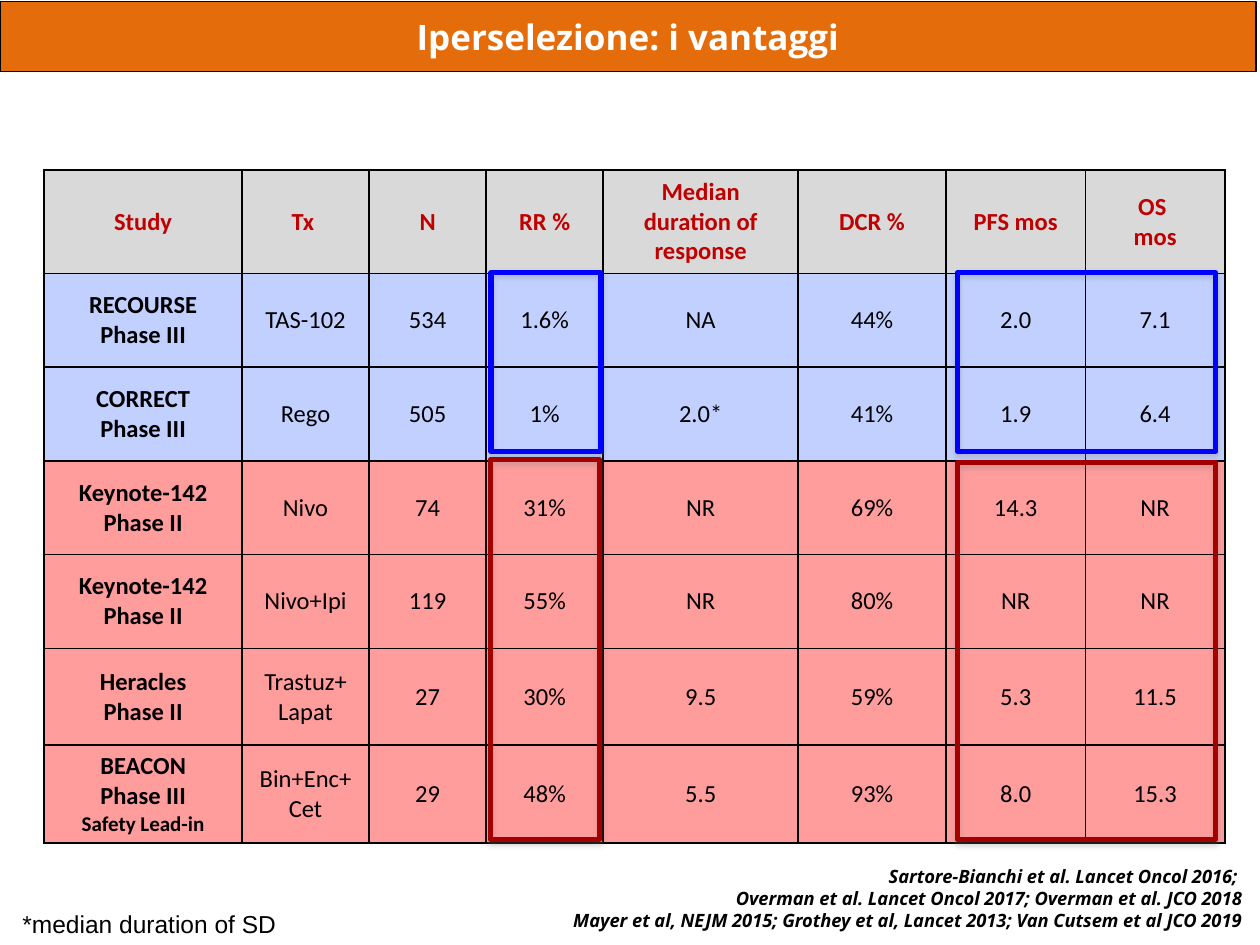
from dataclasses import dataclass
from typing import Any

import pptx
import pptx.dml.color
import pptx.enum.shapes
import pptx.enum.text
import pptx.oxml
import pptx.oxml.ns
import pptx.util

Cm = pptx.util.Cm
Pt = pptx.util.Pt
Rgb = pptx.dml.color.RGBColor
Align = pptx.enum.text.PP_ALIGN
Anchor = pptx.enum.text.MSO_ANCHOR
RECT = pptx.enum.shapes.MSO_SHAPE.RECTANGLE

BLACK = Rgb(0x00, 0x00, 0x00)
WHITE = Rgb(0xFF, 0xFF, 0xFF)
GREY = Rgb(0xD9, 0xD9, 0xD9)
ORANGE = Rgb(0xE4, 0x6C, 0x0A)
CRIMSON = Rgb(0xC0, 0x00, 0x00)
RED = Rgb(0xFF, 0x00, 0x00)
MAROON = Rgb(0xA3, 0x00, 0x00)
AZURE = Rgb(0x33, 0x66, 0xFF)
BLUE = Rgb(0x00, 0x00, 0xFF)

HEAD = {"name": "Calibri", "size": Pt(14), "bold": True}
BODY = HEAD | {"bold": False}
SMALL = HEAD | {"size": Pt(12)}
TITLE = {"name": "Open Sans", "size": Pt(20), "bold": True}
CITE = TITLE | {"size": Pt(10.5), "italic": True}
NOTE = {"name": "Arial", "size": Pt(14)}


@dataclass
class Box:
    left: float
    top: float
    width: float
    height: float

    def cm(self) -> list[int]:
        return [Cm(v) for v in (self.left, self.top, self.width, self.height)]


@dataclass
class Frame:
    box: Box
    color: Rgb


@dataclass
class Tint:
    color: Rgb
    alpha: int


@dataclass
class Row:
    height: float
    tint: Tint
    cells: list[str]


PLAIN = Tint(GREY, 100)
COOL = Tint(AZURE, 30)
WARM = Tint(RED, 39)

WIDTHS = [3.99, 2.56, 2.36, 2.36, 3.93, 2.98, 2.81, 2.81]
ROWS = [
    Row(2.08, PLAIN, ["Study", "Tx ", "N", "RR %", "Median duration of response",
                      "DCR %", "PFS mos", "OS \nmos"]),
    Row(1.89, COOL, ["RECOURSE\nPhase III", "TAS-102", "534", "1.6%", "NA",
                     "44%", "2.0", "7.1"]),
    Row(1.89, COOL, ["CORRECT\nPhase III", "Rego", "505", "1%", "2.0*",
                     "41%", "1.9", "6.4"]),
    Row(1.89, WARM, ["Keynote-142\nPhase II", "Nivo", "74", "31%", "NR",
                     "69%", "14.3", "NR"]),
    Row(1.89, WARM, ["Keynote-142\nPhase II", "Nivo+Ipi", "119", "55%", "NR",
                     "80%", "NR", "NR"]),
    Row(1.95, WARM, ["Heracles\nPhase II", "Trastuz+\nLapat", "27", "30%", "9.5",
                     "59%", "5.3", "11.5"]),
    Row(1.95, WARM, ["BEACON\nPhase III\nSafety Lead-in", "Bin+Enc+Cet", "29",
                     "48%", "5.5", "93%", "8.0", "15.3"]),
]
FRAMES = [
    Frame(Box(9.9, 5.5, 2.2, 3.6), BLUE),
    Frame(Box(9.89, 9.27, 2.2, 7.65), MAROON),
    Frame(Box(19.31, 5.5, 5.2, 3.6), BLUE),
    Frame(Box(19.31, 9.32, 5.2, 7.6), MAROON),
]
SOURCES = (
    "Sartore-Bianchi et al. Lancet Oncol 2016; \n"
    "Overman et al. Lancet Oncol 2017; Overman et al. JCO 2018\n"
    "Mayer et al, NEJM 2015; Grothey et al, Lancet 2013; Van Cutsem et al JCO 2019"
)


def xml(body: str) -> Any:
    head, tail = body.split(" ", 1)
    return pptx.oxml.parse_xml(f"{head} {pptx.oxml.ns.nsdecls('a')} {tail}")


def write(frame: Any, text: str, style: dict, color: Rgb, align: Any) -> None:
    for num, line in enumerate(text.split("\n")):
        para = frame.add_paragraph() if num else frame.paragraphs[0]
        para.alignment = align
        run = para.add_run()
        run.text = line
        look = SMALL if line == "Safety Lead-in" else style
        for key, value in look.items():
            setattr(run.font, key, value)
        run.font.color.rgb = color


def paint(cell: Any, tint: Tint) -> None:
    props = cell._tc.get_or_add_tcPr()
    for side in "LRTB":
        props.append(xml(
            f'<a:ln{side} w="12700"><a:solidFill><a:srgbClr val="{BLACK}"/>'
            f"</a:solidFill></a:ln{side}>"))
    cell.fill.solid()
    cell.fill.fore_color.rgb = tint.color
    if tint.alpha < 100:
        shade = props.find("a:solidFill/a:srgbClr", pptx.oxml.ns._nsmap)
        shade.append(xml(f'<a:alpha val="{tint.alpha * 1000}"/>'))


def add_grid(slide: Any) -> None:
    box = Box(0.89, 3.43, sum(WIDTHS), sum(row.height for row in ROWS))
    table = slide.shapes.add_table(len(ROWS), len(WIDTHS), *box.cm()).table
    table.first_row = table.horz_banding = False
    for col, width in zip(table.columns, WIDTHS):
        col.width = Cm(width)
    for y, row in enumerate(ROWS):
        table.rows[y].height = Cm(row.height)
        for x, text in enumerate(row.cells):
            cell = table.cell(y, x)
            cell.vertical_anchor = Anchor.MIDDLE
            style = HEAD if y == 0 or x == 0 else BODY
            color = BLACK if y else CRIMSON
            write(cell.text_frame, text, style, color, Align.CENTER)
            paint(cell, row.tint)


def add_rect(slide: Any, box: Box, color: Rgb, width: float) -> Any:
    shape = slide.shapes.add_shape(RECT, *box.cm())
    shape.shadow.inherit = False
    shape.fill.background()
    shape.line.color.rgb = color
    shape.line.width = Pt(width)
    return shape


def add_frame(slide: Any, frame: Frame) -> None:
    shape = add_rect(slide, frame.box, frame.color, 3)
    glow = shape._element.spPr.find(pptx.oxml.ns.qn("a:effectLst"))
    glow.append(xml(
        f'<a:outerShdw blurRad="{Pt(3.1)}" dist="{Pt(1.8)}" dir="5400000" '
        'rotWithShape="0"><a:srgbClr val="808080"><a:alpha val="35000"/>'
        "</a:srgbClr></a:outerShdw>"))


def add_text(slide: Any, box: Box, text: str, style: dict, align: Any,
             wrap: bool) -> None:
    frame = slide.shapes.add_textbox(*box.cm()).text_frame
    frame.word_wrap = wrap
    write(frame, text, style, BLACK, align)


def add_title(slide: Any) -> None:
    shape = add_rect(slide, Box(0, 0.03, 25.32, 1.42), BLACK, 0.75)
    shape.fill.solid()
    shape.fill.fore_color.rgb = ORANGE
    shape.text_frame.vertical_anchor = Anchor.MIDDLE
    write(shape.text_frame, "Iperselezione: i vantaggi", TITLE, WHITE, Align.CENTER)


def main() -> None:
    deck = pptx.Presentation()
    deck.slide_width, deck.slide_height = Cm(25.4), Cm(19.05)
    slide = deck.slides.add_slide(deck.slide_layouts[6])
    add_grid(slide)
    add_text(slide, Box(10.3, 17.32, 15, 1.6), SOURCES, CITE, Align.RIGHT, True)
    add_text(slide, Box(0.2, 18.2, 5.66, 0.85), "*median duration of SD", NOTE,
             Align.LEFT, False)
    for frame in FRAMES:
        add_frame(slide, frame)
    add_title(slide)
    deck.save("out.pptx")


if __name__ == "__main__":
    main()
